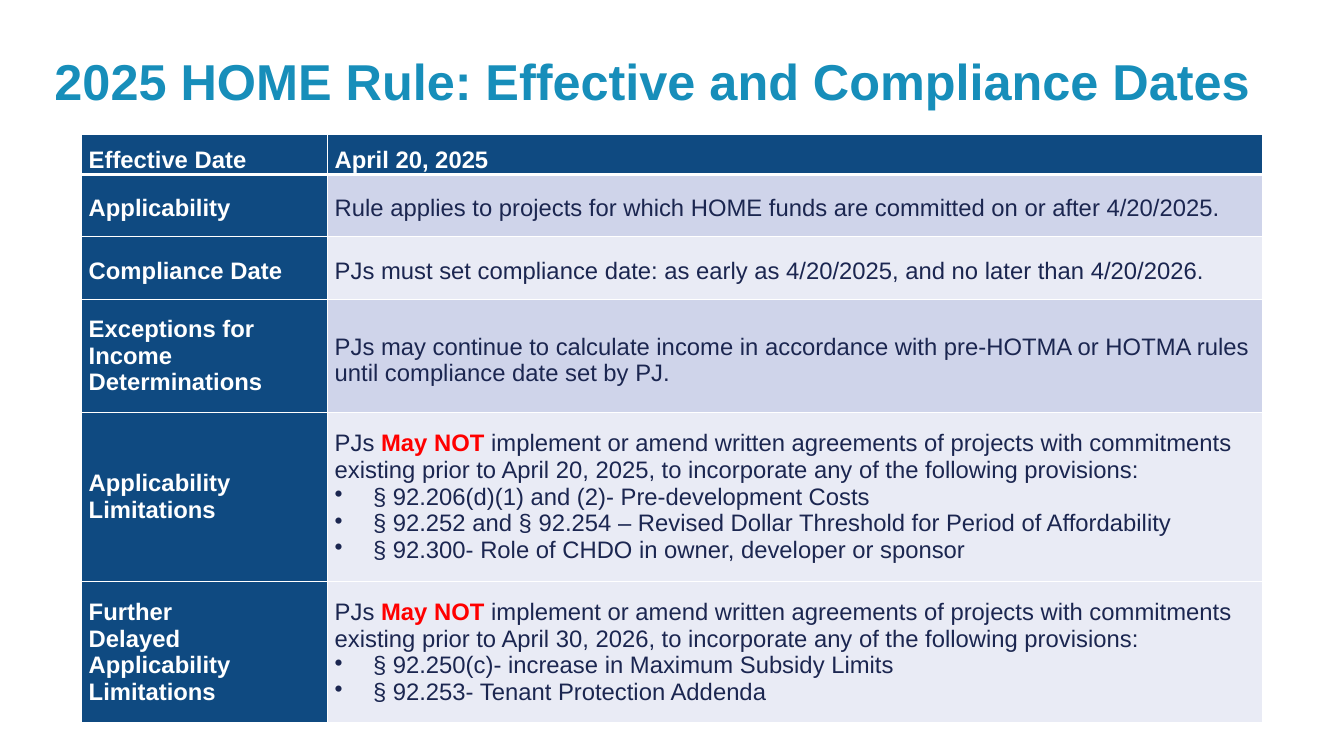
import pptx
import pptx.dml.color
import pptx.enum.text
import pptx.oxml
import pptx.oxml.ns
import pptx.util

Inches = pptx.util.Inches
Pt = pptx.util.Pt
RGBColor = pptx.dml.color.RGBColor
MIDDLE = pptx.enum.text.MSO_ANCHOR.MIDDLE
LEFT = pptx.enum.text.PP_ALIGN.LEFT

# Content: a row is (height, top insets, label paragraphs, detail paragraphs);
# a detail paragraph that starts with BULLET becomes a list item
TITLE = "2025 HOME Rule: Effective and Compliance Dates"
BULLET = "•"
WARNING = "May NOT"
ROWS = [
    (0.4, (0.11, 0.11), ["Effective Date"], ["April 20, 2025"]),
    (0.62, (0.06, 0.06), ["Applicability"],
     ["Rule applies to projects for which HOME funds are committed on or after 4/20/2025."]),
    (0.62, (0.06, 0.06), ["Compliance Date"],
     ["PJs must set compliance date: as early as 4/20/2025, and no later than 4/20/2026."]),
    (1.12, (0, 0.09), ["Exceptions for", "Income Determinations"],
     ["PJs may continue to calculate income in accordance with pre-HOTMA or HOTMA rules "
      "until compliance date set by PJ."]),
    (1.68, (0, 0), ["Applicability Limitations"],
     ["PJs May NOT implement or amend written agreements of projects with commitments",
      "existing prior to April 20, 2025, to incorporate any of the following provisions:",
      "•§ 92.206(d)(1) and (2)- Pre-development Costs",
      "•§ 92.252 and § 92.254 – Revised Dollar Threshold for Period of Affordability",
      "•§ 92.300- Role of CHDO in owner, developer or sponsor"]),
    (1.4, (0, 0), ["Further Delayed Applicability Limitations"],
     ["PJs May NOT implement or amend written agreements of projects with commitments",
      "existing prior to April 30, 2026, to incorporate any of the following provisions:",
      "•§ 92.250(c)- increase in Maximum Subsidy Limits",
      "•§ 92.253- Tenant Protection Addenda"]),
]

# Colours
WHITE = RGBColor(0xFF, 0xFF, 0xFF)
TITLE_BLUE = RGBColor(0x17, 0x8E, 0xBA)
NAVY = RGBColor(0x0F, 0x4A, 0x81)
INK = RGBColor(0x1B, 0x26, 0x50)
RED = RGBColor(0xFF, 0x00, 0x00)
LAVENDER = RGBColor(0xCF, 0xD4, 0xEA)
PALE = RGBColor(0xE9, 0xEB, 0xF5)
DETAIL_FILLS = [NAVY, LAVENDER, PALE, LAVENDER, PALE, PALE]

# Formats
TITLE_FONT = {"name": "Arial", "size": Pt(36), "bold": True}
LABEL_FONT = {"name": "Arial", "size": Pt(17), "bold": True}
DETAIL_FONT = {"name": "Arial", "size": Pt(17), "bold": False}
COLUMNS = [2.44, 9.27]
TEXT_INDENT, LIST_INDENT, LIST_HANGING = 0.07, 0.45, -0.38
NARROW_LABEL_MARGIN = 0.6


def add_span(para, text, font, color):
    span = para.add_run()
    span.text = text
    for name, value in font.items():
        setattr(span.font, name, value)
    span.font.color.rgb = color


def indent(para, is_item):
    properties = para._p.get_or_add_pPr()
    properties.set("marL", str(Inches(LIST_INDENT if is_item else TEXT_INDENT)))
    properties.set("indent", str(Inches(LIST_HANGING if is_item else 0)))
    if is_item:
        namespace = pptx.oxml.ns.nsdecls("a")
        properties.append(pptx.oxml.parse_xml(f'<a:buChar {namespace} char="{BULLET}"/>'))
        properties.append(pptx.oxml.parse_xml(
            f'<a:tabLst {namespace}><a:tab pos="{Inches(LIST_INDENT)}" algn="l"/></a:tabLst>'))


def set_borders(cell, row):
    widths = {"L": 1, "R": 1, "T": 3 if row == 1 else 1, "B": 3 if row == 0 else 1}
    for position, (side, width) in enumerate(widths.items()):
        cell._tc.get_or_add_tcPr().insert(position, pptx.oxml.parse_xml(
            f'<a:ln{side} {pptx.oxml.ns.nsdecls("a")} w="{Pt(width)}">'
            f'<a:solidFill><a:srgbClr val="{WHITE}"/></a:solidFill></a:ln{side}>'))


def fill_cell(cell, row, lines, top, fill, font, color):
    cell.fill.solid()
    cell.fill.fore_color.rgb = fill
    layout = {"margin_left": 0, "margin_right": 0, "margin_top": Inches(top),
              "margin_bottom": 0, "vertical_anchor": MIDDLE}
    for name, value in layout.items():
        setattr(cell, name, value)
    set_borders(cell, row)
    for number, line in enumerate(lines):
        frame = cell.text_frame
        para = frame.add_paragraph() if number else frame.paragraphs[0]
        indent(para, line.startswith(BULLET))
        before, warning, after = line.lstrip(BULLET).partition(WARNING)
        add_span(para, before, font, color)
        if warning:
            add_span(para, warning, {**font, "bold": True}, RED)
            add_span(para, after, font, color)


deck = pptx.Presentation()
deck.slide_width, deck.slide_height = Inches(13.33), Inches(7.5)
page = deck.slides.add_slide(deck.slide_layouts[5])

# Title
title = page.shapes.title
title.left, title.top = Inches(0.54), Inches(0.5)
title.width, title.height = Inches(12.25), Inches(0.67)
title_layout = {"margin_left": 0, "margin_right": 0, "margin_top": 0, "margin_bottom": 0,
                "vertical_anchor": MIDDLE, "word_wrap": True,
                "auto_size": pptx.enum.text.MSO_AUTO_SIZE.NONE}
for name, value in title_layout.items():
    setattr(title.text_frame, name, value)
heading = title.text_frame.paragraphs[0]
heading.alignment = LEFT
heading.line_spacing = 0.9
add_span(heading, TITLE, TITLE_FONT, TITLE_BLUE)

# Table of dates
dates = page.shapes.add_table(
    len(ROWS), len(COLUMNS), Inches(0.81), Inches(1.33),
    Inches(sum(COLUMNS)), Inches(sum(row[0] for row in ROWS))).table
for column, width in zip(dates.columns, COLUMNS):
    column.width = Inches(width)
for row, (height, tops, label, detail) in enumerate(ROWS):
    dates.rows[row].height = Inches(height)
    fill_cell(dates.cell(row, 0), row, label, tops[0], NAVY, LABEL_FONT, WHITE)
    header = row == 0
    fill_cell(dates.cell(row, 1), row, detail, tops[1], DETAIL_FILLS[row],
              LABEL_FONT if header else DETAIL_FONT, WHITE if header else INK)

# The last label breaks after each word
dates.cell(len(ROWS) - 1, 0).margin_right = Inches(NARROW_LABEL_MARGIN)

deck.save("out.pptx")
